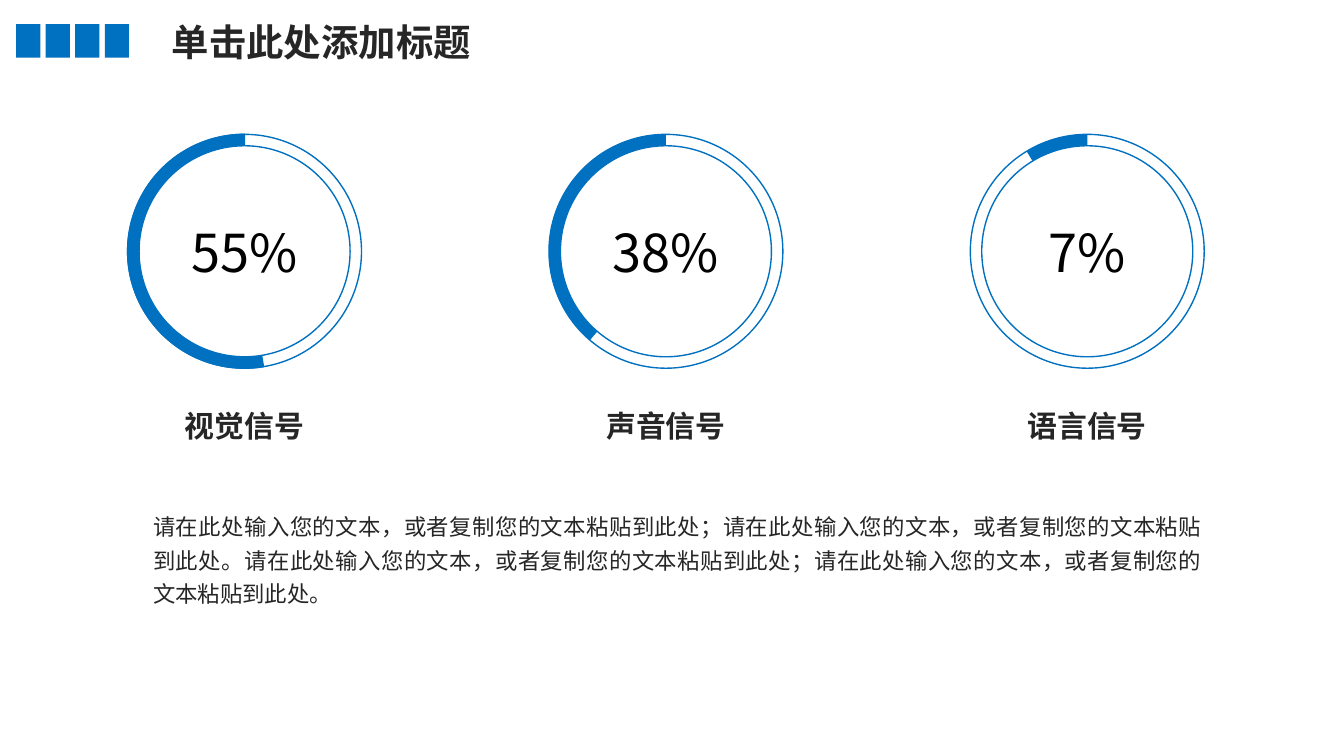
from dataclasses import dataclass
from lxml.etree import SubElement
from pptx import Presentation
from pptx.dml.color import RGBColor
from pptx.enum.shapes import MSO_SHAPE
from pptx.enum.text import MSO_ANCHOR, MSO_AUTO_SIZE, PP_ALIGN
from pptx.oxml.ns import qn
from pptx.util import Inches, Pt

FONT = "Noto Sans CJK SC"
BLUE = "0070C0"
WHITE = "FFFFFF"
BLACK = "000000"
DARK = "262626"
RING = 1.74
DISC = 1.57
TOP = 1.0
FIRST = 0.95
LAST = 7.22


@dataclass
class Gauge:
    value: str
    label: str
    start: float
    edge: bool = False


def paint(color, code: str) -> None:
    color.rgb = RGBColor.from_string(code)


def draw(shapes, kind, left: float, top: float, width: float, height: float,
         fill: str, line: str | None = None):
    shape = shapes.add_shape(kind, Inches(left), Inches(top), Inches(width), Inches(height))
    shape.shadow.inherit = False
    shape.fill.solid()
    paint(shape.fill.fore_color, fill)
    if line:
        paint(shape.line.color, line)
        shape.line.width = Pt(0.75)
    else:
        shape.line.fill.background()
    return shape


def write(para, text: str, size: float, color: str, bold: bool = False) -> None:
    run = para.add_run()
    run.text = text
    font = run.font
    font.size = Pt(size)
    font.bold = bold
    font.name = FONT
    paint(font.color, color)
    SubElement(run._r.get_or_add_rPr(), qn("a:ea"), typeface=FONT)


def center(frame, text: str, size: float, color: str, bold: bool = False) -> None:
    frame.margin_left = frame.margin_right = frame.margin_top = frame.margin_bottom = 0
    frame.vertical_anchor = MSO_ANCHOR.MIDDLE
    frame.word_wrap = True
    para = frame.paragraphs[0]
    para.alignment = PP_ALIGN.CENTER
    write(para, text, size, color, bold)


def add_box(shapes, left: float, top: float, width: float, height: float):
    box = shapes.add_textbox(Inches(left), Inches(top), Inches(width), Inches(height))
    return box.text_frame


def add_gauge(shapes, gauge: Gauge, left: float) -> None:
    group = shapes.add_group_shape().shapes
    draw(group, MSO_SHAPE.OVAL, left, TOP, RING, RING, WHITE, BLUE)
    pie = draw(group, MSO_SHAPE.PIE, left, TOP, RING, RING, BLUE, BLUE if gauge.edge else None)
    pie.adjustments[0] = gauge.start * 0.6
    pie.adjustments[1] = 270 * 0.6
    inset = (RING - DISC) / 2
    disc = draw(group, MSO_SHAPE.OVAL, left + inset, TOP + inset, DISC, DISC, WHITE, BLUE)
    center(disc.text_frame, gauge.value, 28, BLACK)


def add_title(shapes) -> None:
    bars = shapes.add_group_shape().shapes
    for i in range(4):
        draw(bars, MSO_SHAPE.RECTANGLE, 0.12 + 0.22 * i, 0.18, 0.18, 0.25, BLUE)
    frame = add_box(shapes, 1.18, 0.09, 2.45, 0.44)
    frame.word_wrap = False
    frame.auto_size = MSO_AUTO_SIZE.SHAPE_TO_FIT_TEXT
    write(frame.paragraphs[0], "单击此处添加标题", 20, DARK, True)


def add_body(shapes) -> None:
    frame = add_box(shapes, 1.04, 3.72, 8.01, 0.84)
    frame.word_wrap = True
    frame.auto_size = MSO_AUTO_SIZE.SHAPE_TO_FIT_TEXT
    para = frame.paragraphs[0]
    para.alignment = PP_ALIGN.JUSTIFY
    para.line_spacing = 1.25
    para.space_after = Pt(6)
    text = "请在此处输入您的文本，或者复制您的文本粘贴到此处"
    write(para, f"{text}；{text}。" * 2, 12, DARK)


def main() -> None:
    deck = Presentation()
    deck.slide_width = Inches(10)
    deck.slide_height = Inches(10 * 9 / 16)
    shapes = deck.slides.add_slide(deck.slide_layouts[6]).shapes
    gauges = [
        Gauge("55%", "视觉信号", 80.69, True),
        Gauge("38%", "声音信号", 130.5),
        Gauge("7%", "语言信号", 238.77),
    ]
    step = (LAST - FIRST) / (len(gauges) - 1)
    add_title(shapes)
    for i, gauge in enumerate(gauges):
        add_gauge(shapes, gauge, FIRST + step * i)
    for i, gauge in enumerate(gauges):
        frame = add_box(shapes, FIRST + step * i, 2.92, RING, 0.49)
        center(frame, gauge.label, 16, DARK, True)
    add_body(shapes)
    deck.save("out.pptx")


if __name__ == "__main__":
    main()
